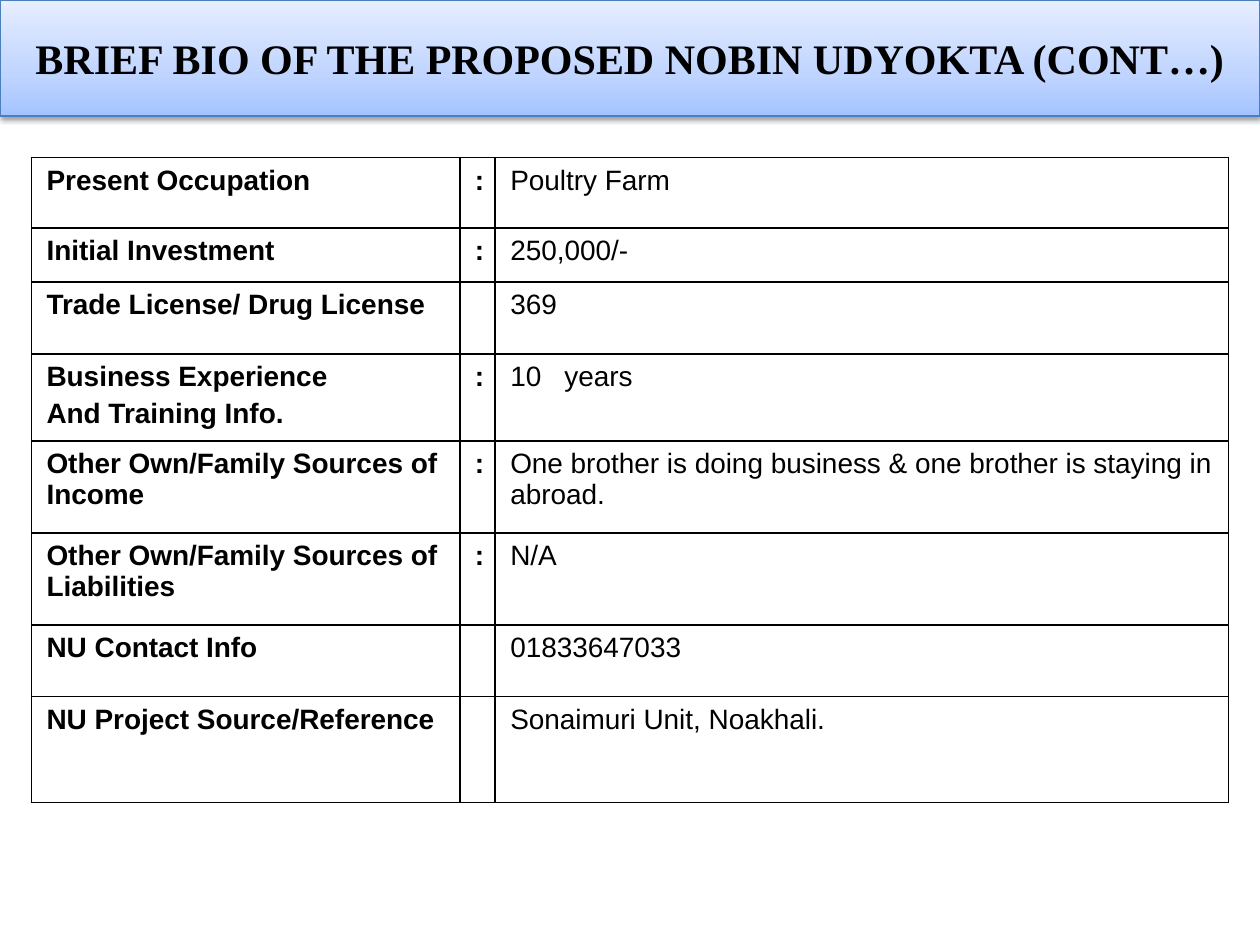
from dataclasses import dataclass

from pptx import Presentation
from pptx.dml.color import RGBColor
from pptx.enum.shapes import MSO_SHAPE
from pptx.enum.text import MSO_ANCHOR, PP_ALIGN
from pptx.oxml import parse_xml
from pptx.oxml.ns import nsdecls
from pptx.util import Emu, Inches, Pt

RECTANGLE = MSO_SHAPE.RECTANGLE
MIDDLE = MSO_ANCHOR.MIDDLE
CENTER = PP_ALIGN.CENTER

BLACK = RGBColor(0x00, 0x00, 0x00)
BANNER_EDGE = RGBColor(0x4B, 0x7E, 0xBC)
# Share of the banner's height from its foot, in percent, and colour
BANNER_STOPS = (
    (0, RGBColor(0xA4, 0xC4, 0xFF)),
    (35, RGBColor(0xBF, 0xD4, 0xFF)),
    (100, RGBColor(0xE6, 0xEE, 0xFF)),
)

TITLE = "BRIEF BIO OF THE PROPOSED NOBIN UDYOKTA (CONT…)"
TITLE_FONT, BODY_FONT = "Times New Roman", "Arial"
TITLE_SIZE, BODY_SIZE = Pt(24), Pt(16)
PARAGRAPH_GAP = BODY_SIZE * 0.2
YEARS_INDENT = Inches(0.43)

SLIDE_WIDTH, SLIDE_HEIGHT = Inches(10), Inches(7.5)
BANNER_HEIGHT = Inches(0.92)
TABLE_LEFT = SLIDE_WIDTH // 40
TABLE_TOP = SLIDE_HEIGHT // 6
COLUMN_WIDTHS = (3.4, 0.28, 5.82)
CELL_MARGIN_X, CELL_MARGIN_Y = Inches(0.12), Inches(0.06)


@dataclass(frozen=True)
class BioRow:
    label: str
    mark: str
    value: str
    height: float


BIO_ROWS = (
    BioRow("Present Occupation", ":", "Poultry Farm", 0.56),
    BioRow("Initial Investment", ":", "250,000/-", 0.43),
    BioRow("Trade License/ Drug License", "", "369", 0.57),
    BioRow("Business Experience\nAnd Training Info.", ":", "10\tyears", 0.69),
    BioRow("Other Own/Family Sources of Income", ":",
           "One brother is doing business & one brother is staying in abroad.", 0.73),
    BioRow("Other Own/Family Sources of Liabilities", ":", "N/A", 0.73),
    BioRow("NU Contact Info", "", "01833647033", 0.57),
    BioRow("NU Project Source/Reference", "", "Sonaimuri Unit, Noakhali.", 0.84),
)


def style_font(font, name: str, size: Emu, bold: bool) -> None:
    font.name, font.size, font.bold = name, size, bold
    font.color.rgb = BLACK


def add_gradient_and_shadow(shape) -> None:
    """Fill upwards from the foot and cast a soft shadow below."""
    stops = "".join(
        f'<a:gs pos="{share * 1000}"><a:srgbClr val="{color}"/></a:gs>'
        for share, color in BANNER_STOPS
    )
    gradient = parse_xml(
        f'<a:gradFill {nsdecls("a")} rotWithShape="1"><a:gsLst>{stops}</a:gsLst>'
        '<a:lin ang="16200000" scaled="0"/></a:gradFill>'
    )
    shadow = parse_xml(
        f'<a:effectLst {nsdecls("a")}><a:outerShdw blurRad="{Pt(3.1)}" dist="{Pt(1.6)}" '
        'dir="5400000" rotWithShape="0"><a:srgbClr val="000000">'
        '<a:alpha val="38000"/></a:srgbClr></a:outerShdw></a:effectLst>'
    )
    properties = shape.element.spPr
    properties.find("a:prstGeom", properties.nsmap).addnext(gradient)
    properties.append(shadow)


def add_banner(slide) -> None:
    s = slide.shapes.add_shape(RECTANGLE, 0, 0, SLIDE_WIDTH, BANNER_HEIGHT)
    s.line.color.rgb = BANNER_EDGE
    s.line.width = Pt(0.75)
    add_gradient_and_shadow(s)
    tf = s.text_frame
    tf.word_wrap = True
    tf.vertical_anchor = MIDDLE
    tf.text = TITLE
    p = tf.paragraphs[0]
    p.alignment = CENTER
    style_font(p.runs[0].font, TITLE_FONT, TITLE_SIZE, True)


def add_borders(cell) -> None:
    properties = cell._tc.get_or_add_tcPr()
    for edge in ("lnL", "lnR", "lnT", "lnB"):
        properties.append(parse_xml(
            f'<a:{edge} {nsdecls("a")} w="{Pt(1)}"><a:solidFill>'
            f'<a:srgbClr val="{BLACK}"/></a:solidFill></a:{edge}>'
        ))


def fill_cell(cell, text: str, bold: bool) -> None:
    cell.margin_left = cell.margin_right = CELL_MARGIN_X
    cell.margin_top = cell.margin_bottom = CELL_MARGIN_Y
    add_borders(cell)
    cell.fill.background()
    cell.text_frame.text = text
    for index, p in enumerate(cell.text_frame.paragraphs):
        if index:
            p.space_before = Emu(int(PARAGRAPH_GAP))
        if "\t" in text:
            properties = p._p.get_or_add_pPr()
            properties.set("marL", str(YEARS_INDENT))
            properties.set("indent", str(-YEARS_INDENT))
        style_font(p.font, BODY_FONT, BODY_SIZE, bold)
        for r in p.runs:
            style_font(r.font, BODY_FONT, BODY_SIZE, bold)


def add_bio_table(slide) -> None:
    width = Inches(sum(COLUMN_WIDTHS))
    height = Inches(sum(row.height for row in BIO_ROWS))
    table = slide.shapes.add_table(
        len(BIO_ROWS), len(COLUMN_WIDTHS), TABLE_LEFT, TABLE_TOP, width, height
    ).table
    table.first_row = table.horz_banding = False
    for column, column_width in zip(table.columns, COLUMN_WIDTHS):
        column.width = Inches(column_width)
    for table_row, bio in zip(table.rows, BIO_ROWS):
        table_row.height = Inches(bio.height)
        texts = (bio.label, bio.mark, bio.value)
        for cell, text in zip(table_row.cells, texts):
            fill_cell(cell, text, bold=text != bio.value)


def main() -> None:
    prs = Presentation()
    prs.slide_width, prs.slide_height = SLIDE_WIDTH, SLIDE_HEIGHT
    slide = prs.slides.add_slide(prs.slide_layouts[6])
    add_bio_table(slide)
    add_banner(slide)
    prs.save("out.pptx")


if __name__ == "__main__":
    main()
